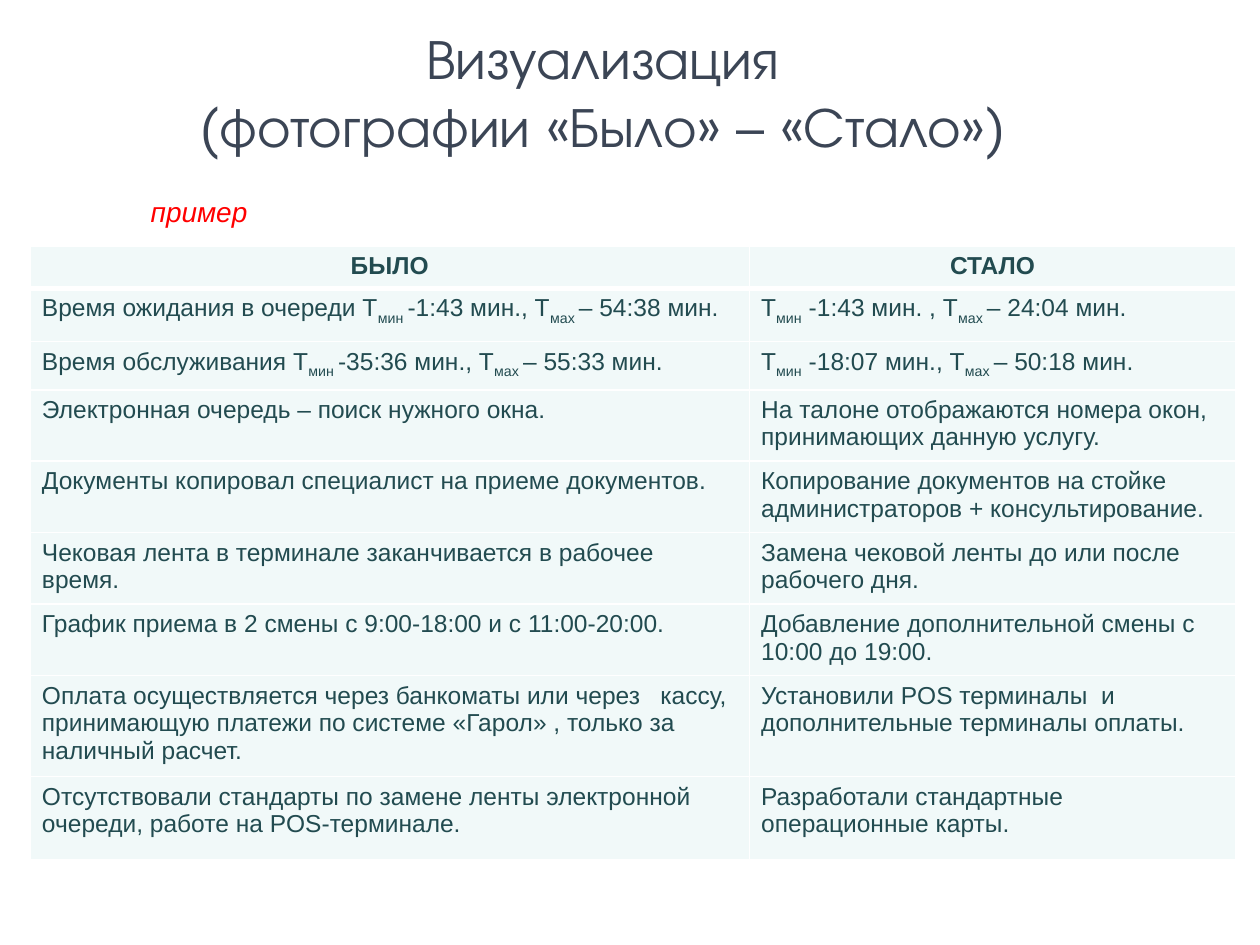
from lxml.etree import SubElement
from pptx import Presentation
from pptx.dml.color import RGBColor
from pptx.enum.text import MSO_ANCHOR, PP_ALIGN
from pptx.oxml.ns import qn
from pptx.util import Pt

TITLE_COLOR = RGBColor(0x3B, 0x45, 0x55)
TEXT_COLOR = RGBColor(0x22, 0x4B, 0x50)
CELL_FILL = RGBColor(0xF1, 0xF9, 0xF9)
BORDER_COLOR = RGBColor(0xFF, 0xFF, 0xFF)
EXAMPLE_COLOR = RGBColor(0xFF, 0x00, 0x00)

# Content: underscores enclose subscripts
TITLE = "Визуализация \v(фотографии «Было» – «Стало») "
EXAMPLE = "пример"
ROWS = [
    ("БЫЛО", "СТАЛО"),
    ("Время ожидания в очереди Т_мин _-1:43 мин., Т_мах _– 54:38 мин.",
     "Т_мин_ -1:43 мин. , Т_мах _– 24:04 мин."),
    ("Время обслуживания Т_мин _-35:36 мин., Т_мах _– 55:33 мин.",
     "Т_мин_ -18:07 мин., Т_мах _– 50:18 мин."),
    ("Электронная очередь – поиск нужного окна.",
     "На талоне отображаются номера окон, принимающих данную услугу."),
    ("Документы копировал специалист на приеме документов.",
     "Копирование документов на стойке администраторов + консультирование."),
    ("Чековая лента в терминале заканчивается в рабочее время.",
     "Замена чековой ленты до или после рабочего дня."),
    ("График приема в 2 смены с 9:00-18:00 и с 11:00-20:00.",
     "Добавление дополнительной смены с 10:00 до 19:00."),
    ("Оплата осуществляется через банкоматы или через   кассу, принимающую "
     "платежи по системе «Гарол» , только за наличный расчет.",
     "Установили POS терминалы  и дополнительные терминалы оплаты."),
    ("Отсутствовали стандарты по замене ленты электронной очереди, работе на POS-терминале.",
     "Разработали стандартные операционные карты."),
]
COLUMN_WIDTHS = [411, 278]
ROW_HEIGHTS = [23, 30.5, 27.5, 39.7, 39.7, 39, 38.6, 56, 47.5]


def set_font(paragraph, name, size, color, bold=False, italic=False):
    font = paragraph.font
    font.name, font.size = name, Pt(size)
    font.bold, font.italic = bold, italic
    font.color.rgb = color


def add_label(slide, box, text, wrap, **font):
    shape = slide.shapes.add_textbox(*map(Pt, box))
    frame = shape.text_frame
    frame.word_wrap = wrap
    frame.vertical_anchor = MSO_ANCHOR.MIDDLE
    paragraph = frame.paragraphs[0]
    paragraph.text = text
    paragraph.alignment = PP_ALIGN.CENTER
    set_font(paragraph, **font)


def set_borders(cell, widths):
    properties = cell._tc.get_or_add_tcPr()
    for side, width in widths.items():
        line = SubElement(properties, qn(f"a:ln{side}"), w=str(Pt(width)))
        fill = SubElement(line, qn("a:solidFill"))
        SubElement(fill, qn("a:srgbClr"), val=str(BORDER_COLOR))


def fill_cell(cell, text, row):
    header = row == 0
    set_borders(cell, {"L": 1, "R": 1, "T": 3 if row == 1 else 1, "B": 3 if header else 1})
    cell.fill.solid()
    cell.fill.fore_color.rgb = CELL_FILL
    cell.margin_left = cell.margin_right = Pt(6.8)
    paragraph = cell.text_frame.paragraphs[0]
    paragraph.alignment = PP_ALIGN.CENTER if header else PP_ALIGN.LEFT
    set_font(paragraph, "Arial", 14, TEXT_COLOR, bold=header)
    for index, part in enumerate(text.split("_")):
        if part:
            run = paragraph.add_run()
            run.text = part
            if index % 2:
                run._r.get_or_add_rPr().set("baseline", "-25000")


def main():
    presentation = Presentation()
    presentation.slide_width, presentation.slide_height = Pt(720), Pt(540)
    slide = presentation.slides.add_slide(presentation.slide_layouts[6])

    # Title and example label
    add_label(slide, (88, 9.5, 522, 85), TITLE, False,
              name="TeX Gyre Adventor", size=32, color=TITLE_COLOR)
    add_label(slide, (65.5, 107.5, 96.5, 26.5), EXAMPLE, True,
              name="Arial", size=16, color=EXAMPLE_COLOR, italic=True)

    # Before and after table
    table = slide.shapes.add_table(
        len(ROWS), len(COLUMN_WIDTHS), Pt(17.2), Pt(140.7),
        Pt(sum(COLUMN_WIDTHS)), Pt(sum(ROW_HEIGHTS))).table
    table.horz_banding = False
    for column, width in zip(table.columns, COLUMN_WIDTHS):
        column.width = Pt(width)
    for row, (texts, height) in enumerate(zip(ROWS, ROW_HEIGHTS)):
        table.rows[row].height = Pt(height)
        for column, text in enumerate(texts):
            fill_cell(table.cell(row, column), text, row)

    presentation.save("out.pptx")


if __name__ == "__main__":
    main()
